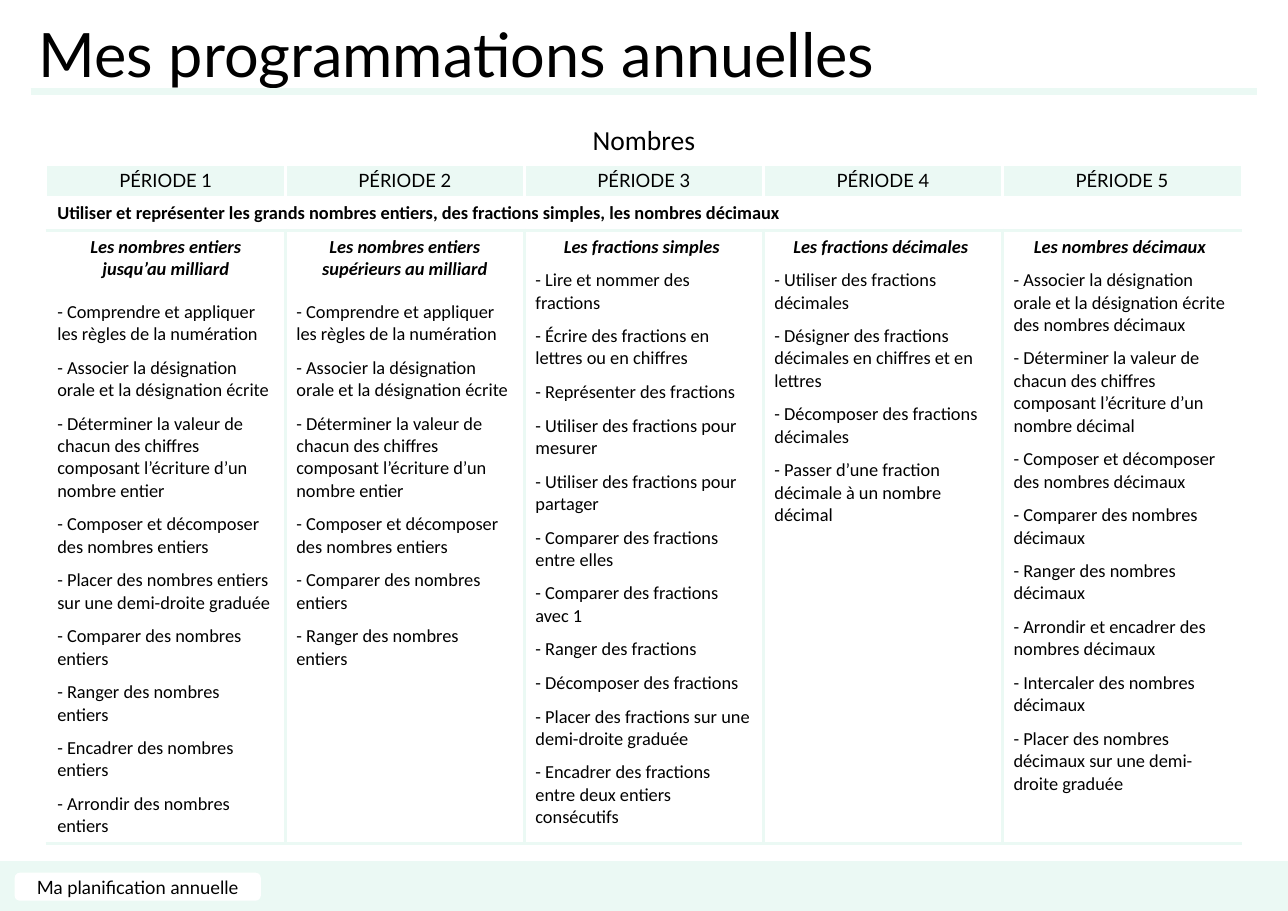
from pptx import Presentation
from pptx.dml.color import RGBColor as RGB
from pptx.enum.shapes import MSO_CONNECTOR as LINE, MSO_SHAPE as SHAPE
from pptx.enum.text import MSO_ANCHOR as ANCHOR, PP_ALIGN as ALIGN
from pptx.oxml.ns import qn
from pptx.util import Inches, Pt
from lxml.etree import SubElement as Sub

# Content
TITLE = "Mes programmations annuelles"
LABEL = "Ma planification annuelle"
THEME = "Nombres"
GOAL = "Utiliser et représenter les grands nombres entiers, des fractions simples, les nombres décimaux"
BASE = [
    "Comprendre et appliquer les règles de la numération",
    "Associer la désignation orale et la désignation écrite",
    "Déterminer la valeur de chacun des chiffres composant l’écriture d’un nombre entier",
    "Composer et décomposer des nombres entiers",
]
SORT = ["Comparer des nombres entiers", "Ranger des nombres entiers"]
# Heading, space before the first item, items
PERIODS = [
    ("Les nombres entiers jusqu’au milliard", 13.3, [
        *BASE,
        "Placer des nombres entiers sur une demi-droite graduée",
        *SORT,
        "Encadrer des nombres entiers",
        "Arrondir des nombres entiers"]),
    ("Les nombres entiers supérieurs au milliard", 13.3, BASE + SORT),
    ("Les fractions simples ", 7.3, [
        "Lire et nommer des fractions",
        "Écrire des fractions en lettres ou en chiffres",
        "Représenter des fractions",
        "Utiliser des fractions pour mesurer",
        "Utiliser des fractions pour partager",
        "Comparer des fractions entre elles",
        "Comparer des fractions avec 1",
        "Ranger des fractions",
        "Décomposer des fractions",
        "Placer des fractions sur une demi-droite graduée",
        "Encadrer des fractions entre deux entiers consécutifs"]),
    ("Les fractions décimales ", 7.3, [
        "Utiliser des fractions décimales",
        "Désigner des fractions décimales en chiffres et en lettres",
        "Décomposer des fractions décimales",
        "Passer d’une fraction décimale à un nombre décimal"]),
    ("Les nombres décimaux ", 7.3, [
        "Associer la désignation orale et la désignation écrite des nombres décimaux",
        "Déterminer la valeur de chacun des chiffres composant l’écriture d’un nombre décimal",
        "Composer et décomposer des nombres décimaux",
        "Comparer des nombres décimaux",
        "Ranger des nombres décimaux",
        "Arrondir et encadrer des nombres décimaux",
        "Intercaler des nombres décimaux",
        "Placer des nombres décimaux sur une demi-droite graduée"]),
]
COLORS = {"mint": "EBF9F4", "white": "FFFFFF", "black": "000000"}
GAP = 7.3
ROWS = [0.4, 0.3, 0.3, 5.57]
COUNT = len(PERIODS)
WIDTH = 2.17


def color(name):
    return RGB.from_string(COLORS[name])


def write(para, text, size=12, font="Calibri", bold=False, italic=False,
          align=ALIGN.LEFT, before=0):
    para.text = text
    para.alignment = align
    para.space_before = Pt(before)
    for run in para.runs:
        run.font.size, run.font.name = Pt(size), font
        run.font.bold, run.font.italic = bold, italic
        run.font.color.rgb = color("black")


def edge(cell, **sides):
    """Draw borders; each side is (color, points)."""
    props = cell._tc.get_or_add_tcPr()
    for side in "LRTB":
        name, width = sides.get(side, ("white", 1))
        line = Sub(props, qn("a:ln" + side), w=str(Pt(width)))
        fill = Sub(line, qn("a:solidFill"))
        Sub(fill, qn("a:srgbClr"), val=COLORS[name])


def block(slide, kind, fill, left, top, width, height):
    shape = slide.shapes.add_shape(
        kind, Inches(left), Inches(top), Inches(width), Inches(height))
    shape.shadow.inherit = False
    shape.fill.solid()
    shape.fill.fore_color.rgb = color(fill)
    shape.line.color.rgb = color(fill)
    shape.line.width = Pt(1)
    return shape


def add_plan(slide):
    table = slide.shapes.add_table(
        len(ROWS), COUNT, Inches(0.42), Inches(1.08),
        Inches(WIDTH * COUNT), Inches(sum(ROWS))).table
    table.first_row = table.horz_banding = False
    for row, height in zip(table.rows, ROWS):
        row.height = Inches(height)
    for col in table.columns:
        col.width = Inches(WIDTH)

    # Borders and fills
    gap, rule = ("white", 2.25), ("mint", 2.25)
    for i in range(COUNT):
        first, last = i == 0, i == COUNT - 1
        theme, head, goal, body = [table.cell(r, i) for r in range(len(ROWS))]
        edge(theme, B=("white", 3))
        edge(head, L=("white", 1) if first else gap, T=("white", 3),
             R=("white", 1) if last else gap)
        edge(goal, B=rule)
        edge(body, L=("white", 1) if first else rule, T=rule,
             R=("white", 1) if last else rule, B=rule)
        for cell in (theme, goal, body):
            cell.fill.background()
        head.fill.solid()
        head.fill.fore_color.rgb = color("mint")

    # Full-width rows
    for r in (0, 2):
        table.cell(r, 0).merge(table.cell(r, COUNT - 1))
    write(table.cell(0, 0).text_frame.paragraphs[0], THEME, 18, align=ALIGN.CENTER)
    write(table.cell(2, 0).text_frame.paragraphs[0], GOAL, bold=True)

    # One column for each period
    for i, (topic, lead, items) in enumerate(PERIODS):
        write(table.cell(1, i).text_frame.paragraphs[0], f"PÉRIODE {i + 1}",
              font="Lato", align=ALIGN.CENTER)
        frame = table.cell(3, i).text_frame
        write(frame.paragraphs[0], topic, bold=True, italic=True, align=ALIGN.CENTER)
        for n, item in enumerate(items):
            write(frame.add_paragraph(), "- " + item, before=GAP if n else lead)


def main():
    deck = Presentation()
    deck.slide_width, deck.slide_height = Inches(11.69), Inches(8.27)
    slide = deck.slides.add_slide(deck.slide_layouts[5])

    # Title
    title = slide.shapes.title
    title.left, title.top = Inches(0.25), Inches(0.1)
    title.width, title.height = Inches(10.1), Inches(0.77)
    title.text_frame.vertical_anchor = ANCHOR.TOP
    write(title.text_frame.paragraphs[0], TITLE, 40, "Lato")

    add_plan(slide)

    # Footer band and label
    block(slide, SHAPE.RECTANGLE, "mint", 0, 7.82, 11.69, 0.44)
    label = block(slide, SHAPE.ROUNDED_RECTANGLE, "white", 0.14, 7.93, 2.22, 0.24)
    frame = label.text_frame
    frame.margin_top = frame.margin_bottom = 0
    frame.vertical_anchor = ANCHOR.MIDDLE
    write(frame.paragraphs[0], LABEL, font="Lato", align=ALIGN.CENTER)

    # Rule under the title
    rule = slide.shapes.add_connector(
        LINE.STRAIGHT, Inches(0.28), Inches(0.83), Inches(11.41), Inches(0.83))
    rule.line.color.rgb = color("mint")
    rule.line.width = Pt(4.75)
    Sub(rule._element.spPr, qn("a:effectLst"))

    deck.save("out.pptx")


if __name__ == "__main__":
    main()
